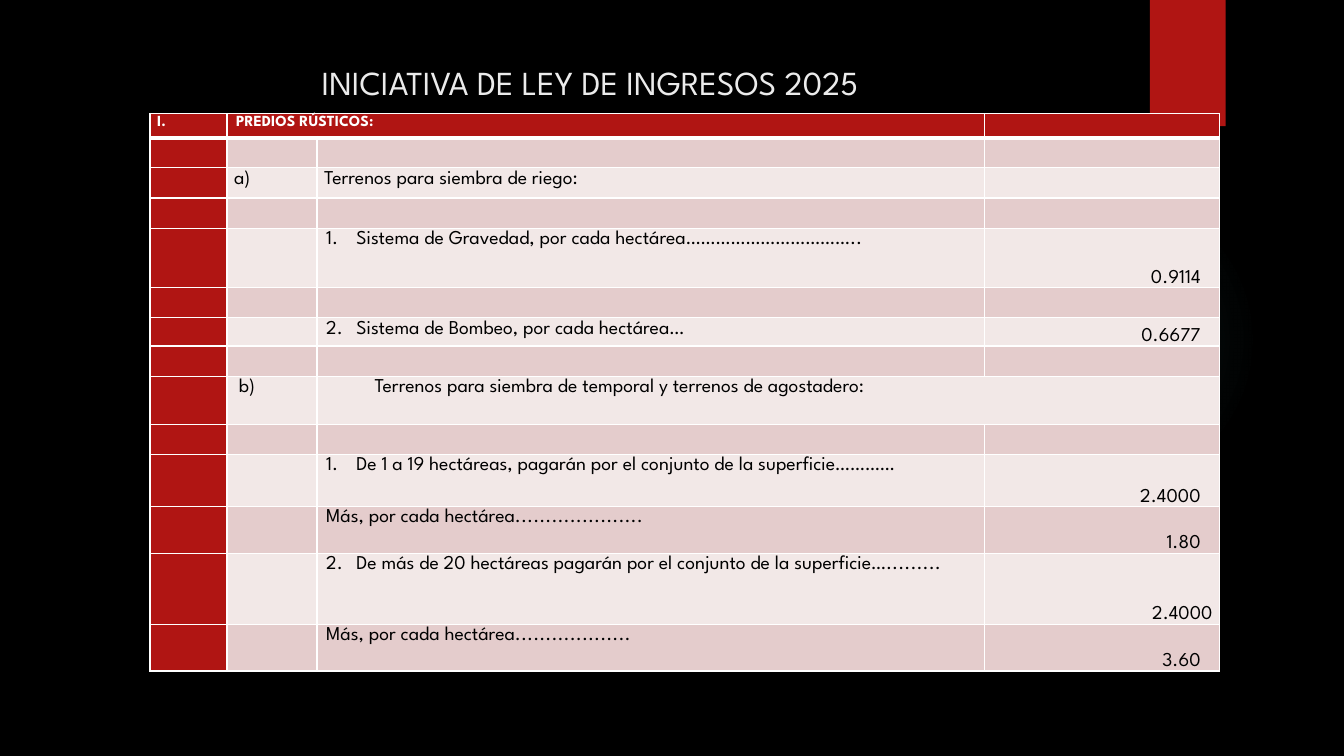
from dataclasses import dataclass

from lxml import etree
from pptx import Presentation
from pptx.dml.color import RGBColor
from pptx.enum.shapes import MSO_SHAPE
from pptx.enum.text import MSO_ANCHOR, PP_ALIGN
from pptx.oxml import parse_xml
from pptx.oxml.ns import nsdecls, qn
from pptx.util import Cm, Pt

RECT, OVAL = MSO_SHAPE.RECTANGLE, MSO_SHAPE.OVAL
TOP, MIDDLE, BOTTOM = MSO_ANCHOR.TOP, MSO_ANCHOR.MIDDLE, MSO_ANCHOR.BOTTOM
CENTER, RIGHT, JUSTIFY = PP_ALIGN.CENTER, PP_ALIGN.RIGHT, PP_ALIGN.JUSTIFY

FONT = "League Spartan"
COLORS = {
    "black": "000000", "white": "FFFFFF", "title": "EBEBEB", "red": "B01513",
    "rose": "E4CCCC", "pale": "F2E8E7", "glow": "50B9C1",
}
COLS = [1.94, 2.27, 16.83, 5.92]
ROWS = [0.61, 0.76, 0.76, 0.76, 1.5, 0.76, 0.71, 0.76, 1.21, 0.76, 1.31, 1.18, 1.79, 1.18]
MERGED = [(0, 1, 2), (8, 2, 3)]  # row, first column, last column
INSET = 0.18


@dataclass
class Entry:
    row: int
    col: int
    text: str
    left: float = 0
    hang: float = 0
    pad: float = INSET


def item(row: int, text: str) -> Entry:
    return Entry(row, 2, text, left=0.81, hang=-0.76)


def rate(row: int, text: str, pad: float = 0.48) -> Entry:
    return Entry(row, 3, text, pad=pad)


ENTRIES = [
    Entry(0, 0, "I."),
    Entry(0, 1, "PREDIOS RÚSTICOS:", left=0.05),
    Entry(2, 1, "a)"),
    Entry(2, 2, "Terrenos para siembra de riego:"),
    item(4, "1.\tSistema de Gravedad, por cada hectárea…………………………….."),
    rate(4, "0.9114"),
    item(6, "2.\tSistema de Bombeo, por cada hectárea…"),
    rate(6, "0.6677"),
    Entry(8, 1, "b)", left=0.12),
    Entry(8, 2, "Terrenos para siembra de temporal y terrenos de agostadero:", left=1.27),
    item(10, "1.\tDe 1 a 19 hectáreas, pagarán por el conjunto de la superficie…………"),
    rate(10, "2.4000"),
    item(11, "Más, por cada hectárea....................."),
    rate(11, "1.80"),
    item(12, "2.\tDe más de 20 hectáreas pagarán por el conjunto de la superficie…........."),
    rate(12, "2.4000", pad=INSET),
    item(13, "Más, por cada hectárea..................."),
    rate(13, "3.60"),
]


def rgb(name: str) -> RGBColor:
    return RGBColor.from_string(COLORS[name])


def write(frame, text: str, *, size: float, color: str, align=JUSTIFY, bold: bool = False,
          space: float = 1.0, left: float = 0, hang: float = 0) -> None:
    para = frame.paragraphs[0]
    para.alignment, para.line_spacing = align, space
    props = para._p.get_or_add_pPr()
    props.set("marL", str(Cm(left)))
    props.set("indent", str(Cm(hang)))
    run = para.add_run()
    run.text = text
    run.font.name, run.font.size, run.font.bold = FONT, Pt(size), bold
    run.font.color.rgb = rgb(color)


def block(slide, kind, left: float, top: float, width: float, height: float):
    shape = slide.shapes.add_shape(kind, Cm(left), Cm(top), Cm(width), Cm(height))
    shape.shadow.inherit = False
    shape.line.fill.background()
    return shape


def glow(shape) -> None:
    stops = "".join(
        f'<a:gs pos="{pos}000"><a:srgbClr val="{COLORS["glow"]}">'
        f'<a:alpha val="{alpha}000"/></a:srgbClr></a:gs>'
        for pos, alpha in [(0, 7), (36, 6), (69, 0)])
    fill = parse_xml(
        f'<a:gradFill {nsdecls("a")}><a:gsLst>{stops}</a:gsLst><a:path path="circle">'
        '<a:fillToRect l="50000" t="50000" r="50000" b="50000"/></a:path></a:gradFill>')
    shape._element.spPr.find(qn("a:prstGeom")).addnext(fill)


def border(cell, row: int) -> None:
    props = cell._tc.get_or_add_tcPr()
    thick = {"T": 3 if row == 1 else 1, "B": 3 if row == 0 else 1}
    for side in "LRTB":
        line = etree.SubElement(props, qn(f"a:ln{side}"), w=str(Pt(thick.get(side, 1))))
        fill = etree.SubElement(line, qn("a:solidFill"))
        etree.SubElement(fill, qn("a:srgbClr"), val=COLORS["white"])


def style(cell, row: int, col: int) -> None:
    border(cell, row)
    color = "red" if row == 0 or col == 0 else "rose" if row % 2 else "pale"
    cell.fill.solid()
    cell.fill.fore_color.rgb = rgb(color)
    cell.margin_left = cell.margin_right = Cm(INSET)
    cell.margin_top = cell.margin_bottom = 0
    # Small end mark keeps empty rows at their set height
    etree.SubElement(cell.text_frame.paragraphs[0]._p, qn("a:endParaRPr"), sz="800")


def main() -> None:
    deck = Presentation()
    deck.slide_width, deck.slide_height = Cm(33.87), Cm(19.05)
    slide = deck.slides.add_slide(deck.slide_layouts[6])
    slide.background.fill.solid()
    slide.background.fill.fore_color.rgb = rgb("black")

    # Backdrop
    glow(block(slide, OVAL, 23.9, 4.65, 7.82, 7.82))
    tab = block(slide, RECT, 28.98, 0, 1.91, 3.18)
    tab.fill.solid()
    tab.fill.fore_color.rgb = rgb("red")

    # Title
    frame = slide.shapes.add_textbox(Cm(1.8), Cm(1.27), Cm(26.14), Cm(1.6)).text_frame
    frame.word_wrap, frame.vertical_anchor = True, MIDDLE
    write(frame, "INICIATIVA DE LEY DE INGRESOS 2025", size=24, color="title", align=CENTER)

    # Table grid
    table = slide.shapes.add_table(len(ROWS), len(COLS), Cm(3.78), Cm(2.86),
                                   Cm(sum(COLS)), Cm(sum(ROWS))).table
    for col, width in enumerate(COLS):
        table.columns[col].width = Cm(width)
    for row, height in enumerate(ROWS):
        table.rows[row].height = Cm(height)
        for col in range(len(COLS)):
            style(table.cell(row, col), row, col)
    for row, first, last in MERGED:
        table.cell(row, first).merge(table.cell(row, last))

    # Table text
    for entry in ENTRIES:
        cell = table.cell(entry.row, entry.col)
        head, value = entry.row == 0, entry.col == 3
        cell.vertical_anchor = BOTTOM if value else TOP
        cell.margin_right = Cm(entry.pad)
        write(cell.text_frame, entry.text, size=11 if head else 14, bold=head,
              color="white" if head else "black", align=RIGHT if value else JUSTIFY,
              space=1.15, left=entry.left, hang=entry.hang)

    deck.save("out.pptx")


if __name__ == "__main__":
    main()
